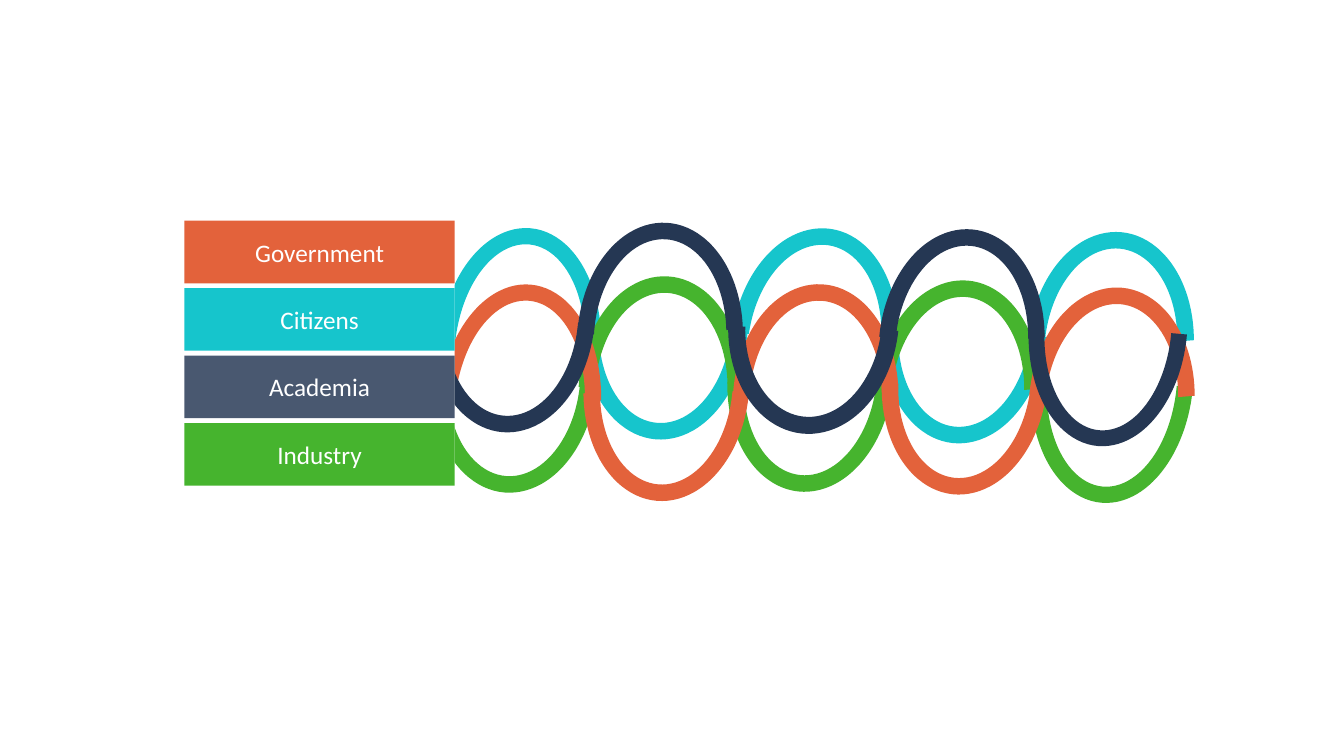
from lxml.etree import SubElement
from pptx import Presentation
from pptx.dml.color import RGBColor
from pptx.enum.shapes import MSO_SHAPE
from pptx.enum.text import MSO_ANCHOR, PP_ALIGN
from pptx.oxml.ns import qn
from pptx.util import Cm, Pt

CYAN = RGBColor(0x16, 0xC5, 0xCC)
GREEN = RGBColor(0x46, 0xB4, 0x2E)
ORANGE = RGBColor(0xE3, 0x62, 0x3B)
NAVY = RGBColor(0x25, 0x37, 0x53)
WHITE = RGBColor(0xFF, 0xFF, 0xFF)

# Arc sizes in cm: width, height
REGULAR = (4.17, 5.82)
TALL = (4.09, 6.2)
WIDE = (4.29, 5.66)
NARROW = (3.99, 5.99)

# Strands from back to front; each arc is left, top (cm), rotation, size
STRANDS = [
    (CYAN, [
        (14.68, 5.26, 184.8, REGULAR),
        (18.44, 5.74, 8, REGULAR),
        (22.23, 5.36, 186.1, REGULAR),
        (25.91, 5.84, 5.2, REGULAR),
        (11.05, 5.74, 5.2, TALL),
    ]),
    (GREEN, [
        (10.87, 6.6, 184.8, REGULAR),
        (14.58, 6.96, 3.2, REGULAR),
        (18.34, 6.58, 186.1, REGULAR),
        (22.05, 7.06, 5.2, REGULAR),
        (25.98, 6.48, 185, TALL),
    ]),
    (ORANGE, [
        (14.71, 6.81, 184.8, REGULAR),
        (18.47, 7.16, 3.2, REGULAR),
        (22.23, 6.65, 186.1, REGULAR),
        (25.93, 7.24, 5.2, REGULAR),
        (11.05, 7.16, 5.2, TALL),
    ]),
    (NAVY, [
        (10.82, 5.08, 184.8, REGULAR),
        (18.36, 5.28, 186.1, WIDE),
        (25.93, 5.26, 185, NARROW),
        (14.55, 5.61, 3.2, REGULAR),
        (22.15, 5.77, 5.2, REGULAR),
    ]),
]

# Label text, fill and opacity in percent, from top to bottom
LABELS = [
    ("Government", ORANGE, 100),
    ("Citizens", CYAN, 100),
    ("Academia", NAVY, 83),
    ("Industry", GREEN, 100),
]
LABEL_LEFT, LABEL_TOP = 4.65, 5.56
LABEL_WIDTH, LABEL_HEIGHT = 6.81, 1.58
LABEL_PITCH = 1.7
PANEL_TOP = 5.54


def add_filled_shape(slide, kind, left, top, width, height, color, opacity=100):
    shape = slide.shapes.add_shape(kind, Cm(left), Cm(top), Cm(width), Cm(height))
    shape.shadow.inherit = False
    shape.line.fill.background()
    shape.fill.solid()
    shape.fill.fore_color.rgb = color
    if opacity < 100:
        fill_color = shape._element.spPr.find(qn("a:solidFill"))[0]
        SubElement(fill_color, qn("a:alpha"), val=str(opacity * 1000))
    return shape


def write_text(shape, text, size=18, color=WHITE, font="Calibri", align=PP_ALIGN.CENTER):
    frame = shape.text_frame
    frame.word_wrap = True
    frame.vertical_anchor = MSO_ANCHOR.MIDDLE
    paragraph = frame.paragraphs[0]
    paragraph.alignment = align
    run = paragraph.add_run()
    run.text = text
    run.font.name = font
    run.font.size = Pt(size)
    run.font.color.rgb = color


def add_arc(slide, left, top, rotation, size, color):
    arc = add_filled_shape(slide, MSO_SHAPE.BLOCK_ARC, left, top, *size, color)
    arc.rotation = rotation
    # Start angle, end angle and thickness; 108 is half a turn
    for index, value in enumerate((108, 209.98, 0.1)):
        arc.adjustments[index] = value


def add_strands(slide):
    for color, arcs in STRANDS:
        for left, top, rotation, size in arcs:
            add_arc(slide, left, top, rotation, size, color)


def add_labels(slide):
    """Add the four labels on a white panel that hides the strand ends."""
    add_filled_shape(slide, MSO_SHAPE.RECTANGLE, LABEL_LEFT, PANEL_TOP,
                     LABEL_WIDTH, LABEL_WIDTH, WHITE)
    for row, (text, color, opacity) in enumerate(LABELS):
        label = add_filled_shape(slide, MSO_SHAPE.RECTANGLE, LABEL_LEFT,
                                 LABEL_TOP + row * LABEL_PITCH,
                                 LABEL_WIDTH, LABEL_HEIGHT, color, opacity)
        write_text(label, text)


def main():
    presentation = Presentation()
    presentation.slide_width = Cm(33.87)
    presentation.slide_height = Cm(19.05)
    slide = presentation.slides.add_slide(presentation.slide_layouts[6])
    add_strands(slide)
    add_labels(slide)
    presentation.save("out.pptx")


if __name__ == "__main__":
    main()
